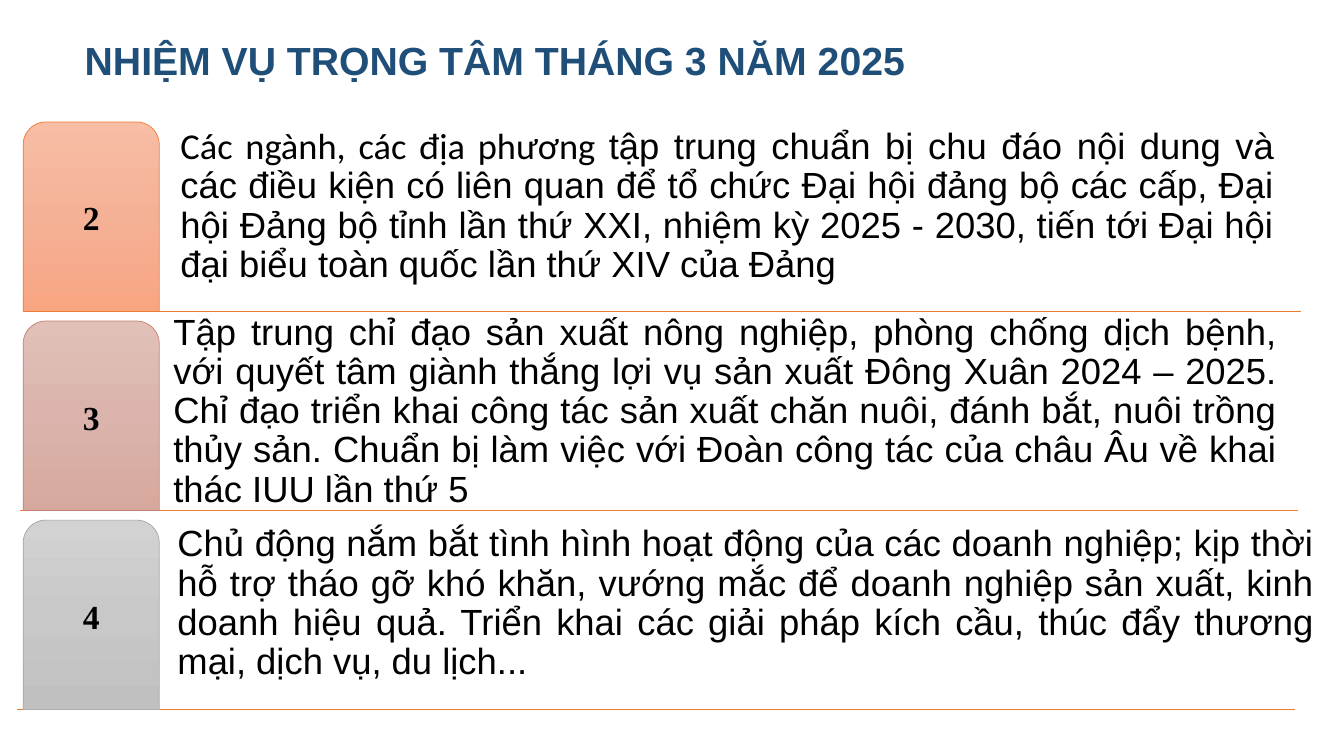
import copy
import pptx
import pptx.util
import pptx.dml.color
import pptx.enum.shapes
import pptx.enum.text
import pptx.oxml.ns
import lxml.etree

Inches = pptx.util.Inches
Pt = pptx.util.Pt
RGB = pptx.dml.color.RGBColor.from_string
ANCHOR = pptx.enum.text.MSO_ANCHOR
ALIGN = pptx.enum.text.PP_ALIGN
qn = pptx.oxml.ns.qn

COLORS = {"title": "1F4E79", "rule": "ED7D31", "text": "000000"}
TAB_TOP, TAB_HEIGHT, PITCH = 1.21, 1.88, 1.975

tasks = [
    {
        "number": "2",
        "gradient": ["F7BDA5", "F5B196", "F8A582"],
        "outline": "ED7D31",
        "area": (1.74, 1.9, 10.96, 0.98),
        "runs": [
            ("Các ngành, các địa phương ", "Calibri"),
            ("tập trung chuẩn bị chu đáo nội dung và các điều kiện có liên quan "
             "để tổ chức Đại hội đảng bộ các cấp, Đại hội Đảng bộ tỉnh lần thứ XXI, "
             "nhiệm kỳ 2025 - 2030, tiến tới Đại hội đại biểu toàn quốc lần thứ XIV "
             "của Đảng", "Arial"),
        ],
    },
    {
        "number": "3",
        "gradient": ["E0C0B9", "DAB4AC", "D7A89E"],
        "outline": "C48170",
        "area": (1.67, 3.56, 11.06, 1.55),
        "runs": [
            ("Tập trung chỉ đạo sản xuất nông nghiệp, phòng chống dịch bệnh, với "
             "quyết tâm giành thắng lợi vụ sản xuất Đông Xuân 2024 – 2025. Chỉ đạo "
             "triển khai công tác sản xuất chăn nuôi, đánh bắt, nuôi trồng thủy sản. "
             "Chuẩn bị làm việc với Đoàn công tác của châu Âu về khai thác IUU lần "
             "thứ 5", "Arial"),
        ],
    },
    {
        "number": "4",
        "gradient": ["D2D2D2", "C8C8C8", "C0C0C0"],
        "outline": "A5A5A5",
        "area": (1.71, 4.94, 11.39, 1.88),
        "runs": [
            ("Chủ động nắm bắt tình hình hoạt động của các doanh nghiệp; kịp thời hỗ "
             "trợ tháo gỡ khó khăn, vướng mắc để doanh nghiệp sản xuất, kinh doanh "
             "hiệu quả. Triển khai các giải pháp kích cầu, thúc đẩy thương mại, dịch "
             "vụ, du lịch...", "Arial"),
        ],
    },
]


def set_frame(shape, anchor, margin):
    frame = shape.text_frame
    frame.word_wrap = True
    frame.auto_size = pptx.enum.text.MSO_AUTO_SIZE.NONE
    frame.vertical_anchor = anchor
    frame.margin_left = frame.margin_right = Inches(margin)
    frame.margin_top = frame.margin_bottom = Inches(0.05)
    return frame.paragraphs[0]


def add_span(para, text, font, size, color, bold=False):
    span = para.add_run()
    span.text = text
    span.font.name = font
    span.font.size = Pt(size)
    span.font.bold = bold
    span.font.color.rgb = RGB(color)


deck = pptx.Presentation()
deck.slide_width = Inches(13.33)
deck.slide_height = Inches(7.5)
page = deck.slides.add_slide(deck.slide_layouts[5])

title = page.shapes.title
title.left, title.top = Inches(0.74), Inches(0.31)
title.width, title.height = Inches(8.7), Inches(0.57)
para = set_frame(title, ANCHOR.TOP, 0.1)
para.alignment = ALIGN.LEFT
add_span(para, "NHIỆM VỤ TRỌNG TÂM THÁNG 3 NĂM 2025", "Arial", 28, COLORS["title"], True)

for index in range(len(tasks)):
    left = 0.23 - 0.03 * index
    y = Inches(TAB_TOP + TAB_HEIGHT + PITCH * index)
    rule = page.shapes.add_connector(
        pptx.enum.shapes.MSO_CONNECTOR.STRAIGHT, Inches(left), y, Inches(left + 12.67), y)
    rule.line.color.rgb = RGB(COLORS["rule"])
    rule.line.width = Pt(1)
    lxml.etree.SubElement(rule.element.spPr, qn("a:effectLst"))

for index, task in enumerate(tasks):
    box = page.shapes.add_textbox(*[Inches(value) for value in task["area"]])
    para = set_frame(box, ANCHOR.BOTTOM, 0.05)
    para.alignment = ALIGN.JUSTIFY
    para.line_spacing = 0.9
    for text, font in task["runs"]:
        add_span(para, text, font, 26, COLORS["text"])

    tab = page.shapes.add_shape(
        pptx.enum.shapes.MSO_SHAPE.ROUND_2_SAME_RECTANGLE,
        Inches(0.23), Inches(TAB_TOP + PITCH * index), Inches(1.35), Inches(TAB_HEIGHT))
    tab.adjustments[0] = 0.167
    tab.adjustments[1] = 0
    tab.shadow.inherit = False
    tab.line.color.rgb = RGB(task["outline"])
    tab.line.width = Pt(0.5)
    tab.fill.gradient()
    tab.fill.gradient_angle = 270
    stop_list = next(tab.element.iter(qn("a:gsLst")))
    stop_list.insert(1, copy.deepcopy(stop_list[0]))
    for stop, position, color in zip(tab.fill.gradient_stops, (0, 0.5, 1), task["gradient"]):
        stop.position = position
        stop.color.rgb = RGB(color)
    para = set_frame(tab, ANCHOR.MIDDLE, 0.05)
    para.alignment = ALIGN.CENTER
    para.line_spacing = 0.9
    add_span(para, task["number"], "Times New Roman", 24, COLORS["text"], True)

deck.save("out.pptx")
